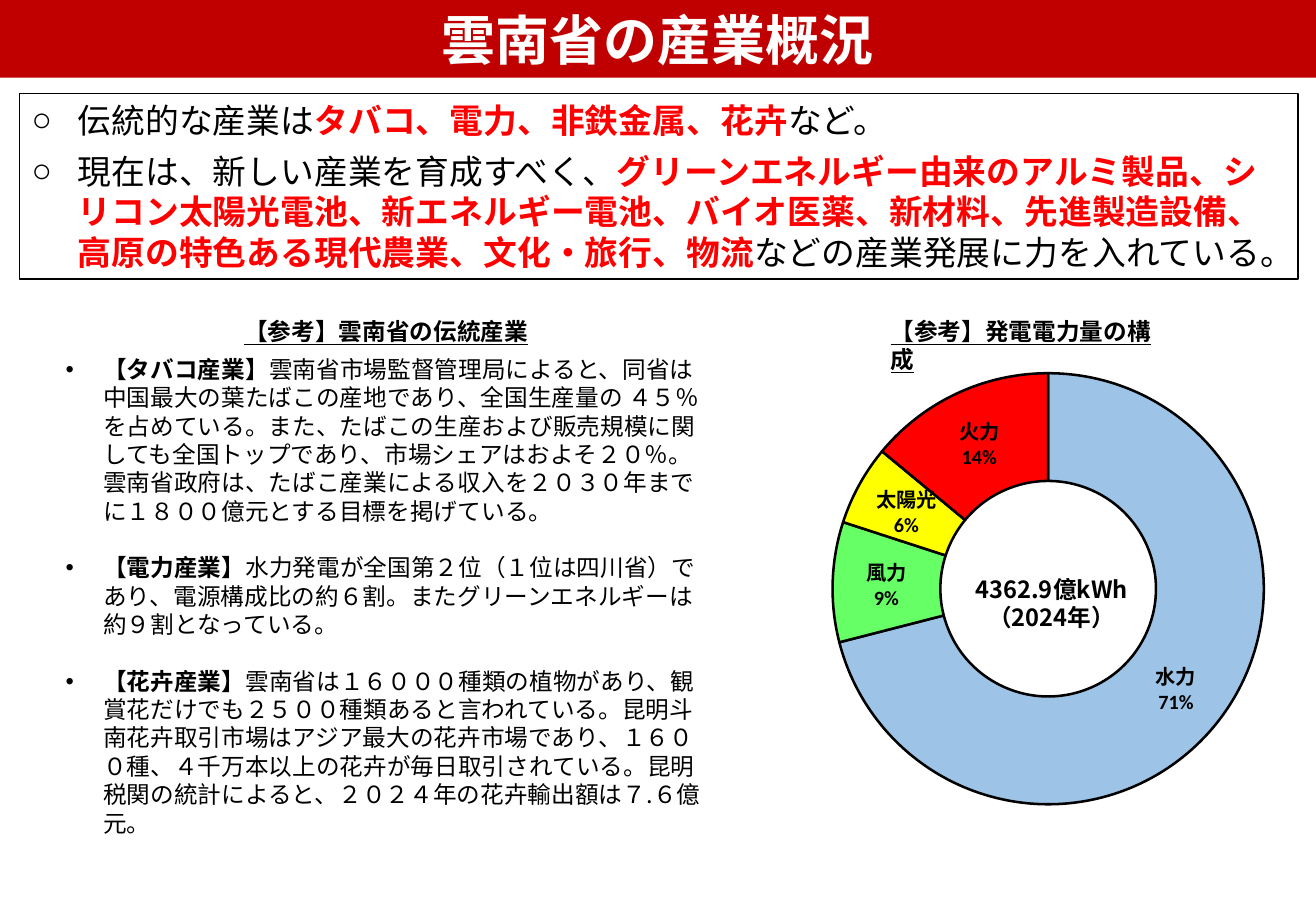
from dataclasses import dataclass

from pptx import Presentation
from pptx.chart.data import CategoryChartData
from pptx.dml.color import RGBColor
from pptx.enum.chart import XL_CHART_TYPE as ChartType
from pptx.enum.text import MSO_ANCHOR as Anchor, MSO_AUTO_SIZE as AutoSize, PP_ALIGN as Align
from pptx.oxml import parse_xml
from pptx.oxml.ns import nsdecls, qn
from pptx.oxml.xmlchemy import OxmlElement
from pptx.util import Inches, Pt


@dataclass(frozen=True)
class Theme:
    font: str = "Noto Sans CJK JP"
    chart_font: str = "Calibri"
    black: RGBColor = RGBColor(0, 0, 0)
    white: RGBColor = RGBColor(255, 255, 255)
    band: RGBColor = RGBColor(0xC0, 0, 0)
    accent: RGBColor = RGBColor(255, 0, 0)
    title_size: int = 32
    summary_size: int = 20
    text_size: int = 14
    label_size: int = 12
    line_ratio: float = 1.2


theme = Theme()

# Content: every paragraph is a list of (text, emphasised) runs
TITLE = "雲南省の産業概況"
SUMMARY = [
    [("伝統的な産業は", False), ("タバコ、電力、非鉄金属、花卉", True), ("など。", False)],
    [("現在は、新しい産業を育成すべく、", False),
     ("グリーンエネルギー由来のアルミ製品、シリコン太陽光電池、新エネルギー電池、"
      "バイオ医薬、新材料、先進製造設備、高原の特色ある現代農業、文化・旅行、物流", True),
     ("などの産業発展に力を入れている。", False)],
]
INDUSTRIES = [
    [("【タバコ産業】", True),
     ("雲南省市場監督管理局によると、同省は中国最大の葉たばこの産地であり、"
      "全国生産量の ４５％を占めている。また、たばこの生産および販売規模に関しても"
      "全国トップであり、市場シェアはおよそ２０％。雲南省政府は、たばこ産業による収入を"
      "２０３０年までに１８００億元とする目標を掲げている。", False)],
    [("【電力産業】", True),
     ("水力発電が全国第２位（１位は四川省）であり、電源構成比の約６割。"
      "またグリーンエネルギーは約９割となっている。", False)],
    [("【花卉産業】", True),
     ("雲南省は１６０００種類の植物があり、観賞花だけでも２５００種類あると言われている。"
      "昆明斗南花卉取引市場はアジア最大の花卉市場であり、１６００種、４千万本以上の花卉が"
      "毎日取引されている。昆明税関の統計によると、２０２４年の花卉輸出額は７.６億元。", False)],
]
HEADINGS = [("【参考】雲南省の伝統産業", (1.91, 2.56, 5.69, 0.34)),
            ("【参考】発電電力量の構成", (7.23, 2.56, 2.35, 0.34))]
TOTAL = ["4362.9億kWh", "（2024年）"]
POWER_MIX = [("水力", 71, "9DC3E6"), ("風力", 9, "66FF66"),
             ("太陽光", 6, "FFFF00"), ("火力", 14, "FF0000")]
PLOT_AREA = {"x": 0.198, "y": 0.042, "w": 0.647, "h": 0.816}


def place(shape, box):
    shape.left, shape.top, shape.width, shape.height = map(Inches, box)


def write(shape, paragraphs, size, color=theme.black, bold=False, underline=False,
          align=Align.LEFT, anchor=Anchor.TOP, bullet=None, indent=0, gap=0,
          emphasis_color=None):
    frame = shape.text_frame
    frame.auto_size = AutoSize.NONE
    frame.word_wrap = True
    frame.vertical_anchor = anchor
    for index, runs in enumerate(paragraphs):
        paragraph = frame.paragraphs[0] if index == 0 else frame.add_paragraph()
        properties = paragraph._p.get_or_add_pPr()
        if bullet:
            properties.set("marL", str(Inches(indent)))
            properties.set("indent", str(-Inches(indent)))
            mark = OxmlElement("a:buChar")
            mark.set("char", bullet)
            properties.append(mark)
        paragraph.alignment = align
        paragraph.line_spacing = Pt(size * theme.line_ratio)
        paragraph.space_before = Pt(0)
        paragraph.space_after = Pt(gap if index < len(paragraphs) - 1 else 0)
        font = paragraph.font
        font.size, font.bold, font.underline = Pt(size), bold, underline
        font.color.rgb = color
        font.name = theme.font
        east_asian = OxmlElement("a:ea")
        east_asian.set("typeface", theme.font)
        properties.find(qn("a:defRPr")).append(east_asian)
        for text, emphasised in runs:
            run = paragraph.add_run()
            run.text = text
            if emphasised:
                run.font.bold = True
                if emphasis_color is not None:
                    run.font.color.rgb = emphasis_color


presentation = Presentation()
presentation.slide_width, presentation.slide_height = Inches(10.83), Inches(7.5)
slide = presentation.slides.add_slide(presentation.slide_layouts[3])
title, summary, industries = list(slide.placeholders)[:3]

# Title band
place(title, (0, 0, 10.83, 0.64))
title.fill.solid()
title.fill.fore_color.rgb = theme.band
write(title, [[(TITLE, False)]], theme.title_size, theme.white, bold=True,
      align=Align.CENTER, anchor=Anchor.MIDDLE)

# Framed summary
place(summary, (0.16, 0.77, 10.52, 1.53))
summary.fill.solid()
summary.fill.fore_color.rgb = theme.white
summary.line.color.rgb = theme.black
summary.line.width = Pt(1)
write(summary, SUMMARY, theme.summary_size, bullet="○", indent=0.38, gap=6,
      emphasis_color=theme.accent)

# Traditional industries, one blank line's height apart
place(industries, (0.44, 2.87, 5.46, 4.1))
write(industries, INDUSTRIES, theme.text_size, bullet="•", indent=0.31,
      gap=theme.text_size * theme.line_ratio)

# Power generation chart
chart_data = CategoryChartData()
chart_data.categories = [name for name, _, _ in POWER_MIX]
chart_data.add_series("発電電力量", [share for _, share, _ in POWER_MIX])
chart = slide.shapes.add_chart(ChartType.DOUGHNUT, *map(Inches, (5.32, 2.89, 6.34, 4.35)),
                               chart_data).chart
chart.has_legend = chart.has_title = False
chart.font.name = theme.chart_font
chart.font.size = Pt(theme.label_size)
chart.font.color.rgb = theme.black
plot = chart.plots[0]
plot.vary_by_categories = True
for index, (_, _, color) in enumerate(POWER_MIX):
    point_format = plot.series[0].points[index].format
    point_format.fill.solid()
    point_format.fill.fore_color.rgb = RGBColor.from_string(color)
    point_format.line.color.rgb = theme.black
    point_format.line.width = Pt(1.5)

plot.has_data_labels = True
labels = plot.data_labels
labels.show_category_name = labels.show_percentage = True
labels.show_value = False
labels.number_format, labels.number_format_is_linked = "0%", False
labels.font.name = theme.chart_font
labels.font.size, labels.font.bold = Pt(theme.label_size), True
labels.font.color.rgb = theme.black
separator = OxmlElement("c:separator")
separator.text = "\n"
labels._element.find(qn("c:showBubbleSize")).addnext(separator)

# Hole size and ring position
doughnut = plot._element
hole = doughnut.find(qn("c:holeSize"))
if hole is None:
    hole = OxmlElement("c:holeSize")
    doughnut.append(hole)
hole.set("val", "50")
plot_area = doughnut.getparent()
for old_layout in plot_area.findall(qn("c:layout")):
    plot_area.remove(old_layout)
sizes = "".join(f'<c:{key} val="{value}"/>' for key, value in PLOT_AREA.items())
plot_area.insert(0, parse_xml(
    f'<c:layout {nsdecls("c")}><c:manualLayout><c:layoutTarget val="inner"/>'
    f'<c:xMode val="edge"/><c:yMode val="edge"/>{sizes}</c:manualLayout></c:layout>'))

# Total inside the ring
total = slide.shapes.add_textbox(*map(Inches, (7.02, 4.68, 3.27, 0.57)))
write(total, [[(line, False)] for line in TOTAL], theme.text_size, bold=True,
      align=Align.CENTER)

# Section headings
for text, box in HEADINGS:
    heading = slide.shapes.add_textbox(*map(Inches, box))
    write(heading, [[(text, False)]], theme.text_size, bold=True, underline=True)

presentation.save("out.pptx")
